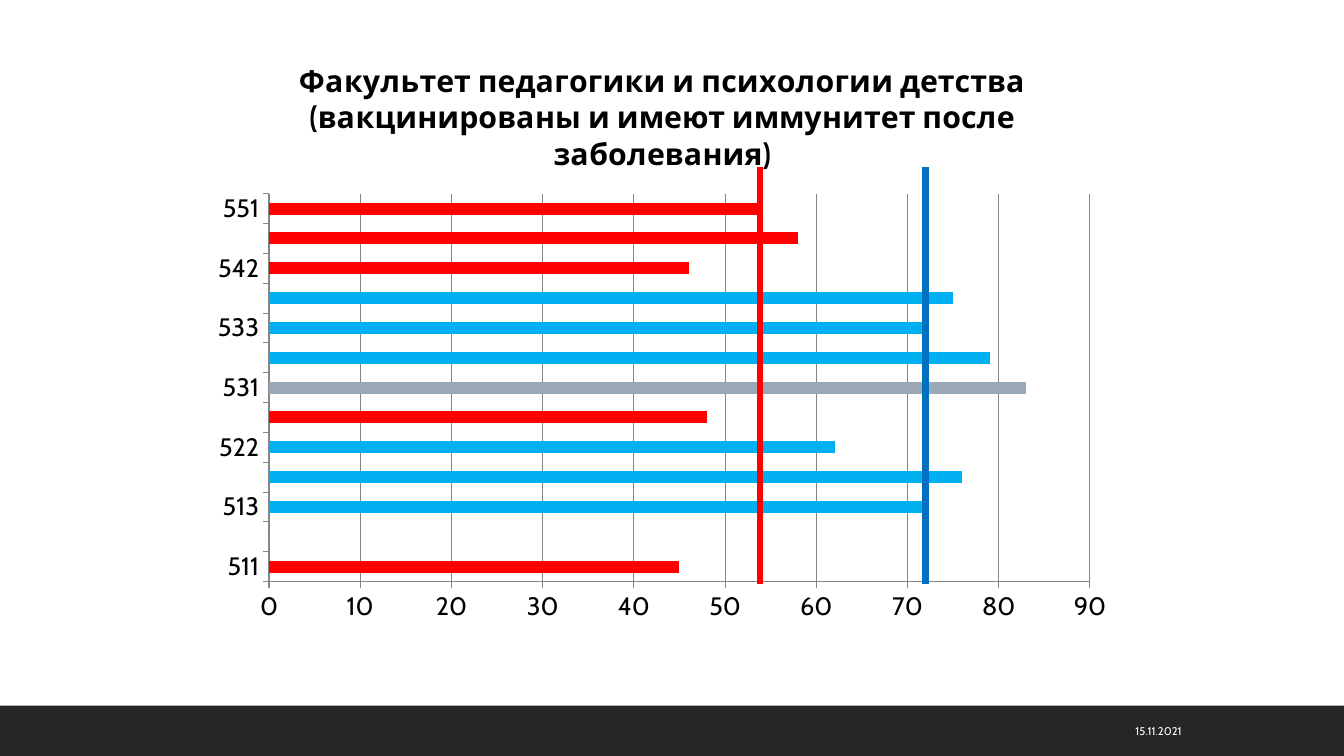
from dataclasses import dataclass

from lxml.etree import SubElement
from pptx import Presentation
from pptx.chart.data import CategoryChartData as ChartData
from pptx.dml.color import RGBColor
from pptx.enum.chart import XL_CHART_TYPE as Kind, XL_TICK_MARK as Tick
from pptx.enum.shapes import MSO_CONNECTOR as Link, MSO_SHAPE as Shape
from pptx.enum.text import MSO_ANCHOR as Anchor, PP_ALIGN as Align
from pptx.oxml.ns import qn
from pptx.util import Inches, Pt

WIDTH, HEIGHT = Inches(13.33), Inches(7.5)
FONT = "Cabin"
RED, SKY, BLUE, GREY = "FF0000", "00B0F0", "0070C0", "9BA8B7"
BLACK, WHITE, DARK, GRID = "000000", "FFFFFF", "262626", "868686"
TITLE = ("Факультет педагогики и психологии детства "
         "(вакцинированы и имеют иммунитет после заболевания)")


@dataclass
class Group:
    name: str
    value: int
    color: str = SKY


@dataclass
class Mark:
    left: float
    color: str


@dataclass
class Box:
    """Area in percent of the slide's width and height."""
    left: float
    top: float
    width: float
    height: float

    def emu(self) -> tuple:
        return (across(self.left), down(self.top),
                across(self.width), down(self.height))


GROUPS = [
    Group("511", 45, RED), Group("512", 0, GREY), Group("513", 72),
    Group("521", 76), Group("522", 62), Group("523", 48, RED),
    Group("531", 83, GREY), Group("532", 79), Group("533", 72),
    Group("541", 75), Group("542", 46, RED), Group("543", 58, RED),
    Group("551", 54, RED),
]
MARKS = [Mark(56.56, RED), Mark(68.87, BLUE)]
MARK_TOP, MARK_END = 22.13, 77.2
BAND = Box(0, 93.33, 100, 6.67)
DATE = Box(67.44, 94, 21.23, 5.33)
CHART = Box(14.85, 4.8, 68.87, 79.2)
PLOT = {"x": 0.075, "y": 0.263, "w": 0.887, "h": 0.648}


def across(share: float) -> int:
    return round(WIDTH * share / 100)


def down(share: float) -> int:
    return round(HEIGHT * share / 100)


def rgb(color: str) -> RGBColor:
    return RGBColor.from_string(color)


def paint(part, color: str) -> None:
    part.fill.solid()
    part.fill.fore_color.rgb = rgb(color)


def style(font, size: float, color: str, bold: bool = False) -> None:
    font.name, font.size, font.bold = FONT, Pt(size), bold
    font.color.rgb = rgb(color)


def add_band(slide) -> None:
    band = slide.shapes.add_shape(Shape.RECTANGLE, *BAND.emu())
    band.shadow.inherit = False
    paint(band, DARK)
    band.line.fill.background()


def add_date(slide) -> None:
    frame = slide.shapes.add_textbox(*DATE.emu()).text_frame
    frame.word_wrap = True
    frame.vertical_anchor = Anchor.MIDDLE
    frame.text = "15.11.2021"
    line = frame.paragraphs[0]
    line.alignment = Align.RIGHT
    style(line.runs[0].font, 8, WHITE)


def place_plot(chart) -> None:
    """Fix the inner plot area as shares of the chart."""
    area = chart.plots[0]._element.getparent()
    layout = area.find(qn("c:layout"))
    if layout is None:
        layout = area.makeelement(qn("c:layout"))
        area.insert(0, layout)
    manual = SubElement(layout, qn("c:manualLayout"))
    modes = {"layoutTarget": "inner", "xMode": "edge", "yMode": "edge"}
    for tag, val in {**modes, **PLOT}.items():
        SubElement(manual, qn(f"c:{tag}")).set("val", str(val))


def add_chart(slide) -> None:
    data = ChartData()
    data.categories = [group.name for group in GROUPS]
    data.add_series(TITLE, [group.value for group in GROUPS])
    chart = slide.shapes.add_chart(
        Kind.BAR_CLUSTERED, *CHART.emu(), data).chart
    chart.has_legend = False
    style(chart.font, 18, BLACK)

    chart.has_title = True
    frame = chart.chart_title.text_frame
    frame.text = TITLE
    style(frame.paragraphs[0].runs[0].font, 21.6, BLACK, True)

    plot = chart.plots[0]
    plot.gap_width = 150
    plot.vary_by_categories = False
    bars = plot.series[0]
    paint(bars.format, GREY)
    for spot, group in enumerate(GROUPS):
        if group.color != GREY:
            paint(bars.points[spot].format, group.color)

    scale = chart.value_axis
    scale.minimum_scale, scale.maximum_scale = 0, 90
    scale.major_unit = 10
    scale.has_major_gridlines = True
    for axis in (chart.category_axis, scale):
        axis.major_tick_mark = Tick.OUTSIDE
    for rule in (chart.category_axis, scale, scale.major_gridlines):
        rule.format.line.color.rgb = rgb(GRID)
        rule.format.line.width = Pt(0.75)
    place_plot(chart)


def add_mark(slide, mark: Mark) -> None:
    left = across(mark.left)
    line = slide.shapes.add_connector(
        Link.STRAIGHT, left, down(MARK_TOP), left, down(MARK_END))
    line.line.color.rgb = rgb(mark.color)
    line.line.width = Pt(4.5)
    SubElement(line._element.spPr, qn("a:effectLst"))


def main() -> None:
    deck = Presentation()
    deck.slide_width, deck.slide_height = WIDTH, HEIGHT
    slide = deck.slides.add_slide(deck.slide_layouts[6])
    add_band(slide)
    add_date(slide)
    add_chart(slide)
    for mark in MARKS:
        add_mark(slide, mark)
    deck.save("out.pptx")


if __name__ == "__main__":
    main()
